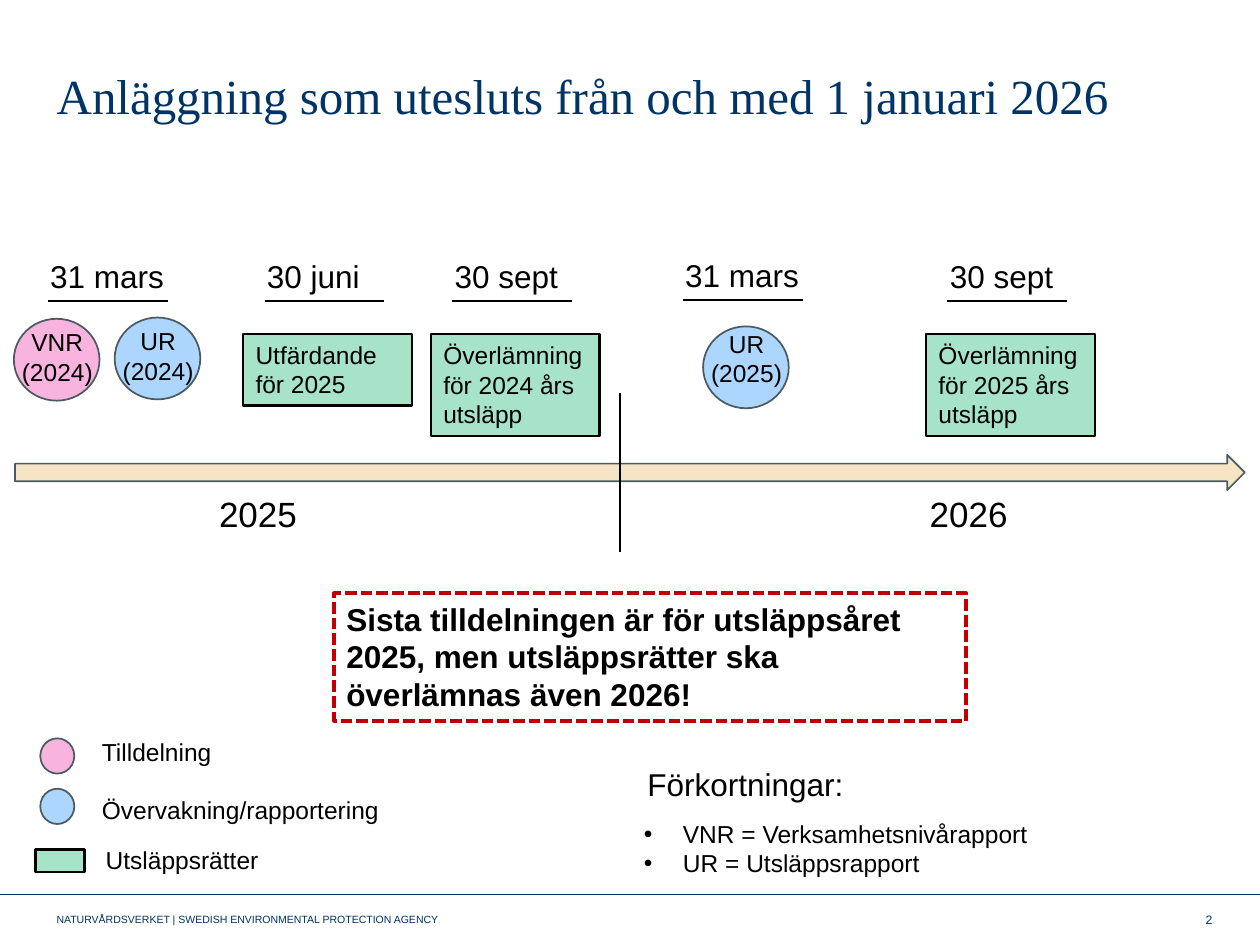
import dataclasses
import typing

import lxml.etree
import pptx
import pptx.dml.color
import pptx.enum.dml
import pptx.enum.shapes
import pptx.enum.text
import pptx.oxml.ns
import pptx.util

Inches = pptx.util.Inches
Pt = pptx.util.Pt
Kind = pptx.enum.shapes.MSO_SHAPE
Align = pptx.enum.text.PP_ALIGN
Anchor = pptx.enum.text.MSO_ANCHOR

BLACK, NAVY, SLATE, RED = "000000", "003366", "4B5B60", "C00000"
PINK, BLUE, GREEN, SAND = "F8B4DE", "ADD6FF", "A6E3C9", "F6E5C5"
Box = tuple[float, float, float, float]


@dataclasses.dataclass
class Event:
    date: str
    left: float
    top: float = 1.99
    lines: tuple[str, ...] = ()
    height: float = 0.81


@dataclasses.dataclass
class Ball:
    lines: tuple[str, ...]
    left: float
    top: float
    fill: str
    drop: float = 0.02


@dataclasses.dataclass
class Key:
    label: str
    at: Box
    kind: typing.Any
    box: Box
    fill: str


EVENTS = [
    Event("31 mars", 0.3),
    Event("30 juni", 2.02, lines=("Utfärdande", "för 2025"), height=0.57),
    Event("30 sept", 3.51, lines=("Överlämning för 2024 års utsläpp",)),
    Event("31 mars", 5.34, 1.98),
    Event("30 sept", 7.44, lines=("Överlämning för 2025 års utsläpp",)),
]
BALLS = [
    Ball(("VNR", "(2024)"), 0.11, 2.53, PINK),
    Ball(("UR", "(2024)"), 0.91, 2.52, BLUE),
    Ball(("UR", "(2025)"), 5.58, 2.59, BLUE, -0.03),
]
KEYS = [
    Key("Tilldelning", (0.71, 5.8, 1.61, 0.34), Kind.OVAL, (0.32, 5.86, 0.27, 0.28), PINK),
    Key("Övervakning/rapportering", (0.71, 6.26, 2.4, 0.34), Kind.OVAL,
        (0.32, 6.26, 0.27, 0.28), BLUE),
    Key("Utsläppsrätter", (0.74, 6.66, 1.61, 0.34), Kind.RECTANGLE,
        (0.28, 6.74, 0.39, 0.18), GREEN),
]


def color(code: str) -> pptx.dml.color.RGBColor:
    return pptx.dml.color.RGBColor.from_string(code)


def apply(item: typing.Any, values: dict[str, typing.Any]) -> None:
    for name, value in values.items():
        setattr(item, name, value)


def place(shape: typing.Any, at: Box) -> None:
    names = ("left", "top", "width", "height")
    apply(shape, dict(zip(names, map(Inches, at))))


def write(shape: typing.Any, lines: typing.Iterable[str], size: float, ink: str = BLACK,
          face: str = "Arial", bold: bool = False, align: typing.Any = Align.LEFT,
          anchor: typing.Any = Anchor.TOP) -> None:
    frame = shape.text_frame
    apply(frame, {"word_wrap": True, "vertical_anchor": anchor,
                  "auto_size": pptx.enum.text.MSO_AUTO_SIZE.NONE})
    frame.text = "\n".join(lines)
    for para in frame.paragraphs:
        apply(para, {"alignment": align, "space_before": Pt(0)})
        font = para.runs[0].font
        apply(font, {"size": Pt(size), "name": face, "bold": bold})
        font.color.rgb = color(ink)


def label(slide: typing.Any, at: Box, lines: typing.Iterable[str], size: float,
          **style: typing.Any) -> None:
    write(slide.shapes.add_textbox(*map(Inches, at)), lines, size, **style)


def form(slide: typing.Any, kind: typing.Any, at: Box, fill: str | None,
         edge: str = SLATE, width: float = 1) -> typing.Any:
    """Draw a preset shape; without a fill it is see-through."""
    shape = slide.shapes.add_shape(kind, *map(Inches, at))
    shape.shadow.inherit = False
    if fill:
        shape.fill.solid()
        shape.fill.fore_color.rgb = color(fill)
    else:
        shape.fill.background()
    shape.line.color.rgb = color(edge)
    shape.line.width = Pt(width)
    return shape


def rule(slide: typing.Any, ends: Box, ink: str, width: float) -> None:
    """Draw a straight line from the first point to the second."""
    line = slide.shapes.add_connector(
        pptx.enum.shapes.MSO_CONNECTOR.STRAIGHT, *map(Inches, ends))
    line.line.color.rgb = color(ink)
    line.line.width = Pt(width)
    lxml.etree.SubElement(line._element.spPr, pptx.oxml.ns.qn("a:effectLst"))


def bullet(para: typing.Any, indent: float) -> None:
    props = para._p.get_or_add_pPr()
    props.set("marL", str(Inches(indent)))
    props.set("indent", str(-Inches(indent)))
    mark = lxml.etree.SubElement(props, pptx.oxml.ns.qn("a:buChar"))
    mark.set("char", "•")


def draw_event(slide: typing.Any, event: Event) -> None:
    left, top = event.left, event.top
    label(slide, (left, top, 1.34, 0.4), [event.date], 18)
    rule(slide, (left + 0.08, top + 0.4, left + 1.03, top + 0.4), BLACK, 1)
    if event.lines:
        at = (left - 0.09, 2.65, 1.34, event.height)
        write(form(slide, Kind.RECTANGLE, at, GREEN, BLACK, 1.5), event.lines, 14)


def draw_ball(slide: typing.Any, ball: Ball) -> None:
    form(slide, Kind.OVAL, (ball.left, ball.top, 0.68, 0.65), ball.fill)
    at = (ball.left - 0.21, ball.top + ball.drop, 1.11, 0.57)
    label(slide, at, ball.lines, 14, align=Align.CENTER)


def draw_key(slide: typing.Any, key: Key) -> None:
    edge, width = (SLATE, 1) if key.kind == Kind.OVAL else (BLACK, 1.5)
    form(slide, key.kind, key.box, key.fill, edge, width)
    label(slide, key.at, [key.label], 14)


def main() -> None:
    deck = pptx.Presentation()
    apply(deck, {"slide_width": Inches(10), "slide_height": Inches(7.5)})
    slide = deck.slides.add_slide(deck.slide_layouts[1])
    title, body = slide.placeholders

    place(title, (0.35, 0.39, 9.37, 1.07))
    write(title, ["Anläggning som utesluts från och med 1 januari 2026"], 28, NAVY,
          "Times New Roman")
    title.text_frame.paragraphs[0].line_spacing = Pt(39.6)

    rule(slide, (0, 7.1, 10, 7.1), NAVY, 0.4)
    label(slide, (0.35, 7.1, 3.38, 0.4),
          ["NATURVÅRDSVERKET | SWEDISH ENVIRONMENTAL PROTECTION AGENCY"], 6,
          ink=NAVY, anchor=Anchor.MIDDLE)
    label(slide, (7.47, 7.1, 2.25, 0.4), ["2"], 7, ink=NAVY, align=Align.RIGHT,
          anchor=Anchor.MIDDLE)

    form(slide, Kind.RIGHT_ARROW, (0.12, 3.61, 9.76, 0.28), SAND)
    for year, left in (("2025", 1.64), ("2026", 7.28)):
        label(slide, (left, 3.86, 2.2, 0.44), [year], 20)
    rule(slide, (4.92, 3.12, 4.92, 4.38), BLACK, 1.5)

    for event in EVENTS:
        draw_event(slide, event)
    for ball in BALLS:
        draw_ball(slide, ball)
    for key in KEYS:
        draw_key(slide, key)

    label(slide, (5.04, 6.02, 1.8, 0.71), ["Förkortningar:"], 18)
    place(body, (5.01, 6.45, 3.38, 0.57))
    write(body, ["VNR = Verksamhetsnivårapport", "UR = Utsläppsrapport"], 14)
    for para in body.text_frame.paragraphs:
        bullet(para, 0.31)

    note = form(slide, Kind.RECTANGLE, (2.65, 4.71, 5.02, 1.01), None, RED, 2.25)
    note.line.dash_style = pptx.enum.dml.MSO_LINE.SQUARE_DOT
    write(note, ["Sista tilldelningen är för utsläppsåret 2025, "
                 "men utsläppsrätter ska överlämnas även 2026!"], 18, bold=True)

    deck.save("out.pptx")


if __name__ == "__main__":
    main()
